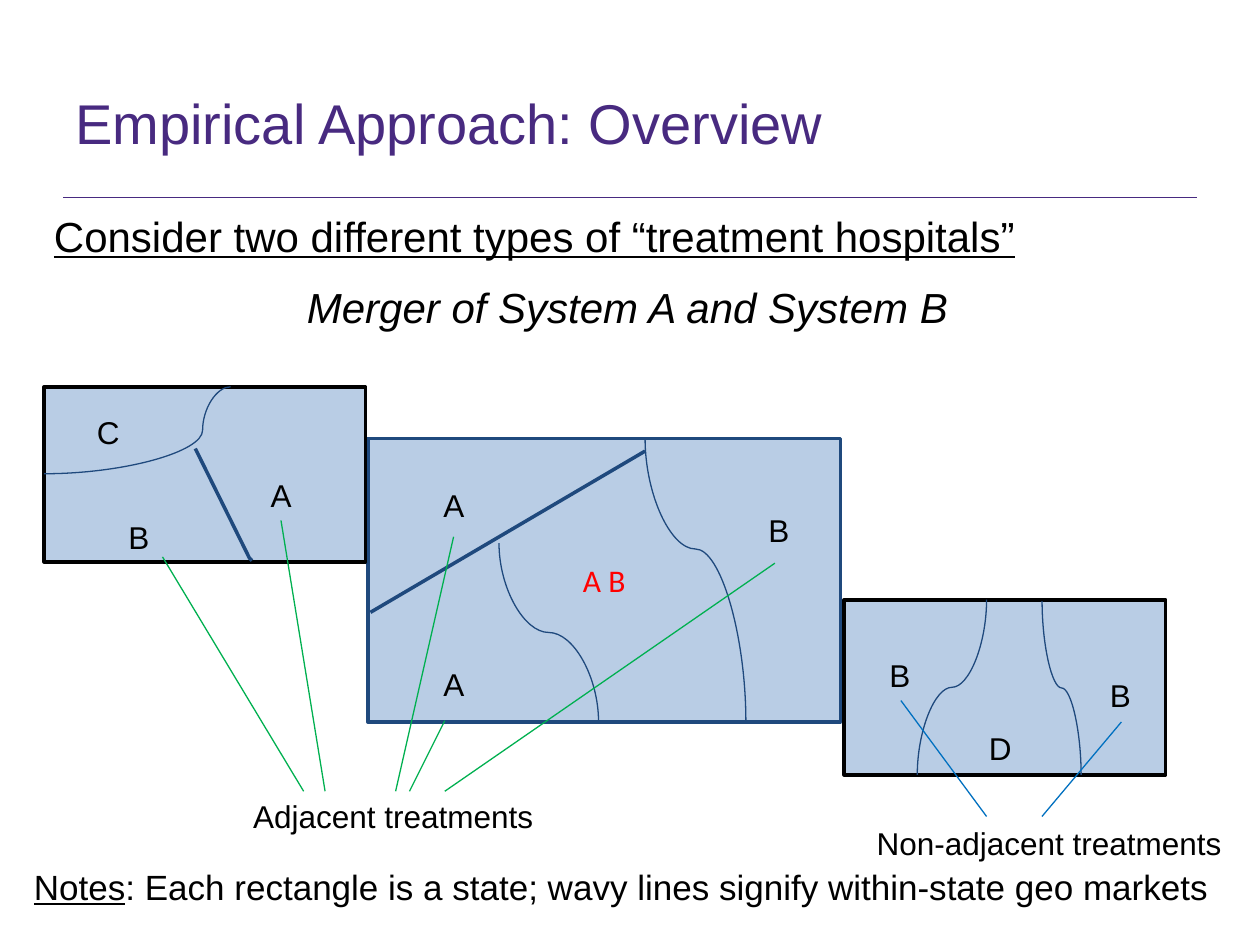
from lxml import etree
from pptx import Presentation
from pptx import util as u
from pptx.dml.color import RGBColor
from pptx.enum import shapes, text
from pptx.oxml.ns import qn

SCALE = 9144
COLORS = {
    "title": "482A80",
    "black": "000000",
    "state": "B9CDE5",
    "market": "1F497D",
    "overlap": "FF0000",
    "adjacent": "00B050",
    "distant": "0070C0",
}


def px(value):
    return u.Emu(round(value * SCALE))


def color(name):
    return RGBColor.from_string(COLORS[name])


class Diagram:
    def __init__(self, slide, font="Arial"):
        self.slide = slide
        self.font = font

    def outline(self, shape, name, width):
        shape.line.color.rgb = color(name)
        shape.line.width = u.Pt(width)

    def run(self, paragraph, words, size, name="black", font=None, **style):
        run = paragraph.add_run()
        run.text = words
        run.font.name = font or self.font
        run.font.size = u.Pt(size)
        run.font.color.rgb = color(name)
        for key, value in style.items():
            setattr(run.font, key, value)

    def text_box(self, left, top, width, height, wrap=True):
        shape = self.slide.shapes.add_textbox(*map(px, (left, top, width, height)))
        shape.text_frame.word_wrap = wrap
        return shape.text_frame

    def label(self, words, left, top, width=37):
        frame = self.text_box(left, top, width, 40, wrap=False)
        self.run(frame.paragraphs[0], words, 18)

    def state(self, left, top, width, height, line):
        shape = self.slide.shapes.add_shape(
            shapes.MSO_SHAPE.RECTANGLE, *map(px, (left, top, width, height)))
        shape.shadow.inherit = False
        shape.fill.solid()
        shape.fill.fore_color.rgb = color("state")
        self.outline(shape, line, 2)
        return shape.text_frame

    def connector(self, start, end, name, kind=shapes.MSO_CONNECTOR.STRAIGHT):
        line = self.slide.shapes.add_connector(kind, *map(px, (*start, *end)))
        self.outline(line, name, 0.75)
        etree.SubElement(line._element.spPr, qn("a:effectLst"))
        return line

    def wave(self, start, end, bend=50, upright=True):
        line = self.connector(start, end, "market", shapes.MSO_CONNECTOR.CURVE)
        properties = line._element.spPr
        if upright:
            (x1, y1), (x2, y2) = start, end
            width, height = y2 - y1, abs(x2 - x1)
            line.left = px((x1 + x2 - width) / 2)
            line.top = px((y1 + y2 - height) / 2)
            line.width, line.height = px(width), px(height)
            transform = properties.find(qn("a:xfrm"))
            transform.attrib.clear()
            transform.set("rot", "16200000" if x2 > x1 else "5400000")
            if x2 > x1:
                transform.set("flipH", "1")
        guides = properties.find(qn("a:prstGeom")).find(qn("a:avLst"))
        etree.SubElement(guides, qn("a:gd"), name="adj1", fmla=f"val {bend * 1000}")

    def border(self, *points):
        builder = self.slide.shapes.build_freeform(*points[0], scale=SCALE)
        builder.add_line_segments(points[1:], close=False)
        shape = builder.convert_to_shape()
        shape.shadow.inherit = False
        shape.fill.background()
        self.outline(shape, "market", 2)


def main():
    presentation = Presentation()
    presentation.slide_width, presentation.slide_height = px(1000), px(750)
    slide = presentation.slides.add_slide(presentation.slide_layouts[6])
    diagram = Diagram(slide)

    diagram.connector((50, 157), (950, 157), "title")
    title = diagram.text_box(50, 34, 900, 125)
    title.vertical_anchor = text.MSO_ANCHOR.MIDDLE
    diagram.run(title.paragraphs[0], "Empirical Approach: Overview", 32, "title")

    body = diagram.text_box(33, 162, 930, 110)
    diagram.run(body.paragraphs[0],
                "Consider two different types of “treatment hospitals”", 24, underline=True)
    merger = body.add_paragraph()
    merger.alignment = text.PP_ALIGN.CENTER
    merger.space_before = u.Pt(12)
    diagram.run(merger, "Merger of System A and System B", 24, italic=True)

    overlap = diagram.state(292, 348, 375, 225, "market")
    overlap.vertical_anchor = text.MSO_ANCHOR.MIDDLE
    overlap.paragraphs[0].alignment = text.PP_ALIGN.CENTER
    diagram.run(overlap.paragraphs[0], "A B", 18, "overlap", "Calibri")
    for left, top in ((35, 307), (670, 476)):
        diagram.state(left, top, 255, 139, "black")

    diagram.wave((396, 431), (475, 573))
    diagram.wave((512, 348), (592, 573), bend=39)
    diagram.wave((35, 376), (183, 307), bend=85, upright=False)
    diagram.wave((783, 476), (728, 615))
    diagram.wave((827, 477), (858, 615))
    diagram.border((294, 486), (512, 358))
    diagram.border((155, 356), (198, 443), (200, 445))

    for start, end in (
        ((129, 442), (241, 628)),
        ((223, 413), (258, 628)),
        ((360, 426), (314, 628)),
        ((353, 572), (325, 628)),
        ((615, 447), (353, 628)),
    ):
        diagram.connector(start, end, "adjacent")
    for start, end in (((715, 556), (783, 648)), ((890, 573), (827, 648))):
        diagram.connector(start, end, "distant")

    for words, left, top in (
        ("C", 67, 323), ("A", 205, 373), ("B", 92, 406),
        ("A", 342, 381), ("A", 342, 523), ("B", 600, 401),
        ("B", 696, 516), ("B", 871, 532), ("D", 775, 574),
    ):
        diagram.label(words, left, top)
    diagram.label("Adjacent treatments", 191, 628, 245)
    diagram.label("Non-adjacent treatments", 686, 649, 296)

    notes = diagram.text_box(17, 682, 983, 44).paragraphs[0]
    diagram.run(notes, "Notes", 20, underline=True)
    diagram.run(notes, ": Each rectangle is a state; wavy lines signify "
                       "within-state geo markets", 20)

    presentation.save("out.pptx")


if __name__ == "__main__":
    main()
